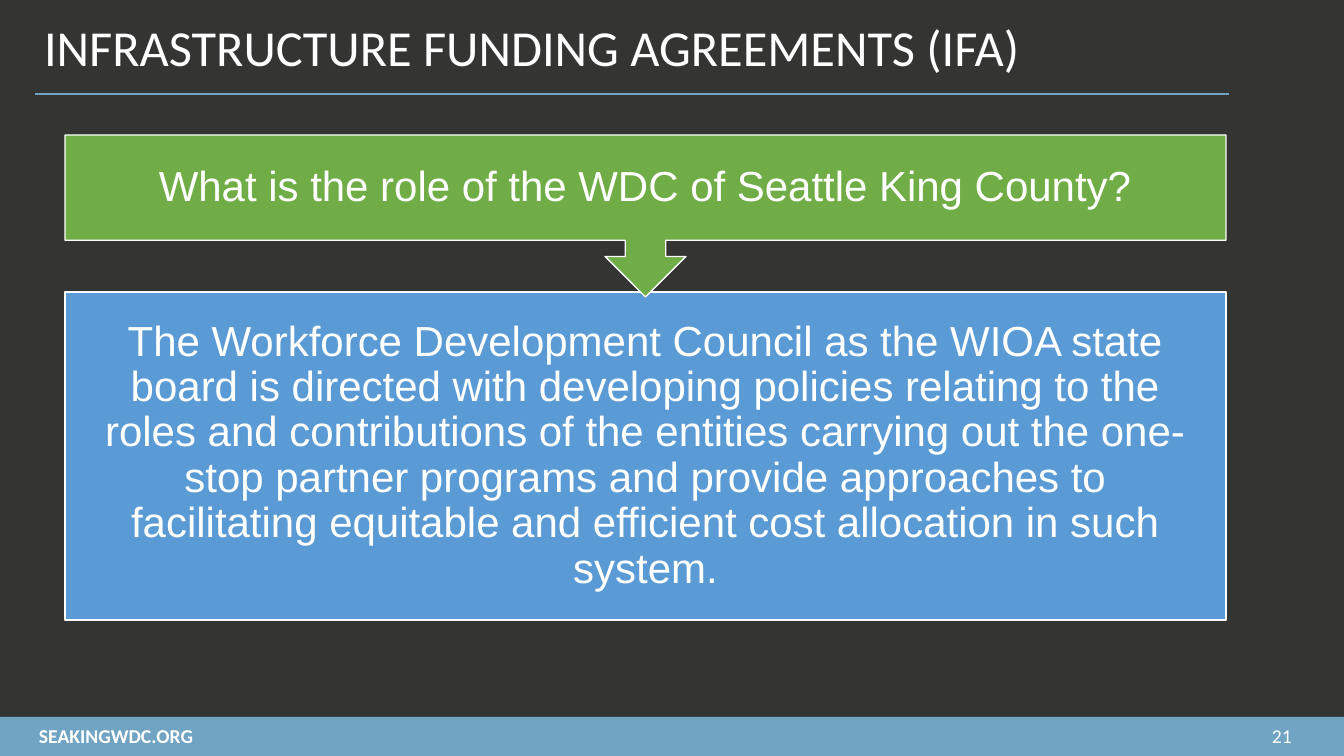
from pptx import Presentation
from pptx import util as u
from pptx.dml.color import RGBColor
from pptx.enum import shapes, text
from pptx.oxml.ns import qn
from lxml import etree

TITLE = "INFRASTRUCTURE FUNDING AGREEMENTS (IFA)"
QUESTION = "What is the role of the WDC of Seattle King County?"
ANSWER = (
    "The Workforce Development Council as the WIOA state board is directed with "
    "developing policies relating to the roles and contributions of the entities "
    "carrying out the one-stop partner programs and provide approaches to "
    "facilitating equitable and efficient cost allocation in such system."
)
FOOTER = [
    ("21", (1262, 719, 52, 34), False),
    ("SEAKINGWDC.ORG", (29, 719, 198, 34), True),
]
COLORS = {"dark": "343433", "steel": "71A3C2", "blue": "5B9BD5",
          "green": "70AD47", "white": "FFFFFF"}
W, H = 1344, 756
BAR_TOP = 717
STEP_LEFT, STEP_WIDTH = 65, 1161
STEPS = [
    (ANSWER, shapes.MSO_SHAPE.RECTANGLE, 292, 328, "blue"),
    (QUESTION, shapes.MSO_SHAPE.DOWN_ARROW_CALLOUT, 135, 162, "green"),
]
INSET = 23


def px(n):
    return round(n * 914400 / 100.8)


def rgb(name):
    return RGBColor.from_string(COLORS[name])


def write(s, words, size, font, bold=False, spacing=None, align=None):
    tf = s.text_frame
    tf.text = words
    p = tf.paragraphs[0]
    p.alignment = align
    p.line_spacing = spacing
    r = p.runs[0]
    r.font.size = u.Pt(size)
    r.font.name = font
    r.font.bold = bold
    r.font.color.rgb = rgb("white")
    return tf


def block(slide, kind, box, fill, outlined):
    s = slide.shapes.add_shape(kind, *map(px, box))
    s.shadow.inherit = False
    s.fill.solid()
    s.fill.fore_color.rgb = rgb(fill)
    if outlined:
        s.line.color.rgb = rgb("white")
        s.line.width = u.Pt(1)
    else:
        s.line.fill.background()
    return s


def main():
    prs = Presentation()
    prs.slide_width, prs.slide_height = px(W), px(H)
    slide = prs.slides.add_slide(prs.slide_layouts[5])
    slide.background.fill.solid()
    slide.background.fill.fore_color.rgb = rgb("dark")

    title = slide.shapes.title
    title.left, title.top, title.width, title.height = map(px, (34, 12, 1217, 76))
    tf = write(title, TITLE, 36, "Calibri", spacing=0.9, align=text.PP_ALIGN.LEFT)
    tf.vertical_anchor = text.MSO_ANCHOR.MIDDLE

    block(slide, shapes.MSO_SHAPE.RECTANGLE, (0, BAR_TOP, W, H - BAR_TOP), "steel", False)
    for words, box, bold in FOOTER:
        s = slide.shapes.add_textbox(*map(px, box))
        tf = write(s, words, 14, "Calibri", bold)
        tf.word_wrap = True

    rule = slide.shapes.add_connector(
        shapes.MSO_CONNECTOR.STRAIGHT, *map(px, (35, 94, 1229, 94)))
    rule.line.color.rgb = rgb("steel")
    rule.line.width = u.Pt(1.5)
    etree.SubElement(rule._element.spPr, qn("a:effectLst"))

    for words, kind, top, height, fill in STEPS:
        s = block(slide, kind, (STEP_LEFT, top, STEP_WIDTH, height), fill, True)
        tf = write(s, words, 30, "Arial", spacing=0.9, align=text.PP_ALIGN.CENTER)
        tf.word_wrap = True
        tf.vertical_anchor = text.MSO_ANCHOR.MIDDLE
        tf.margin_left = tf.margin_right = tf.margin_top = tf.margin_bottom = px(INSET)

    prs.save("out.pptx")


if __name__ == "__main__":
    main()
